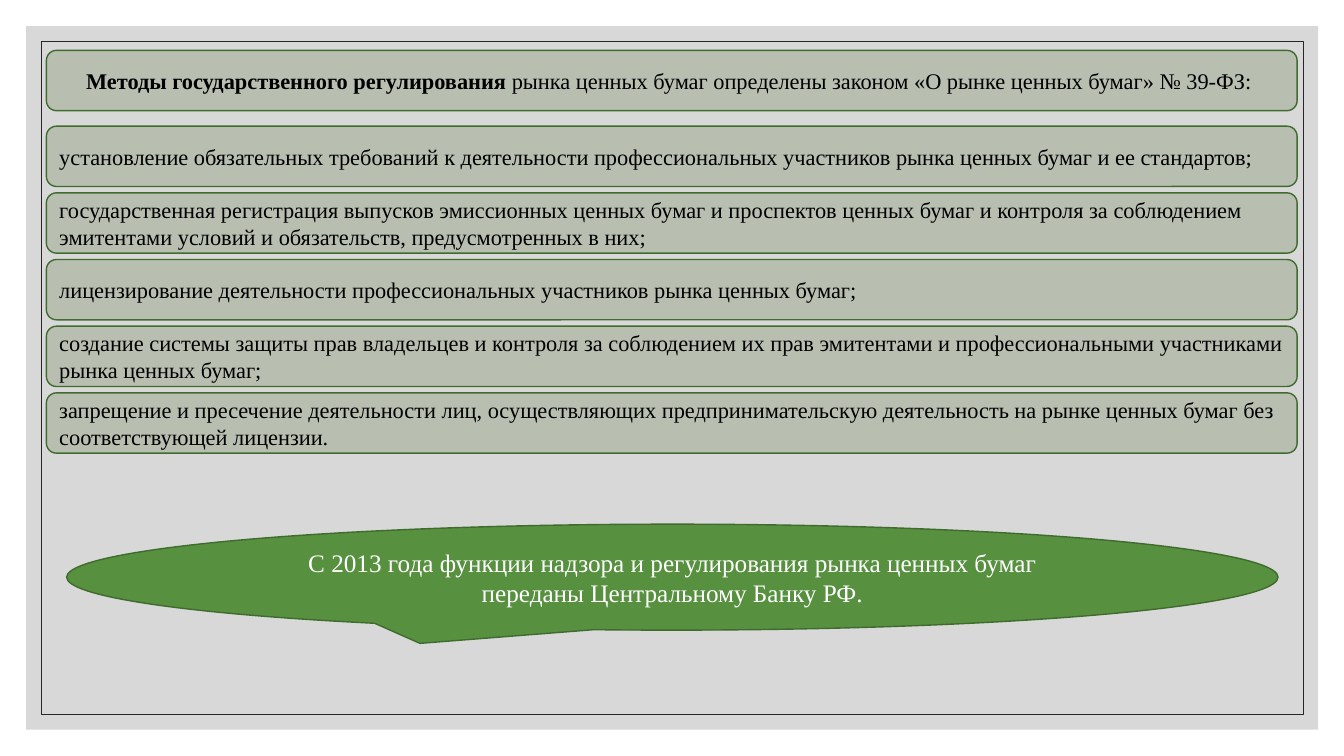
import pptx
import pptx.util
import pptx.dml.color
import pptx.enum.shapes
import pptx.enum.text
import pptx.oxml.ns
import lxml.etree

Cm = pptx.util.Cm
Pt = pptx.util.Pt
Kind = pptx.enum.shapes.MSO_SHAPE
Align = pptx.enum.text.PP_ALIGN

colors = {
    "panel": "BFBFBF",
    "frame": "262626",
    "bar": "B8BFB1",
    "edge": "406B2F",
    "bubble": "57903F",
    "dark": "000000",
    "light": "FFFFFF",
}


def shade(name):
    return pptx.dml.color.RGBColor.from_string(colors[name])


def draw(kind, box, fill=None, line=None, width=1, runs=(), size=16, ink="dark", align=Align.LEFT):
    shape = slide.shapes.add_shape(kind, *[Cm(v) for v in box])
    shape.shadow.inherit = False
    if fill:
        shape.fill.solid()
        shape.fill.fore_color.rgb = shade(fill)
    else:
        shape.fill.background()
    if line:
        shape.line.color.rgb = shade(line)
        shape.line.width = Pt(width)
    else:
        shape.line.fill.background()
    frame = shape.text_frame
    frame.word_wrap = True
    frame.vertical_anchor = pptx.enum.text.MSO_ANCHOR.MIDDLE
    para = frame.paragraphs[0]
    para.alignment = align
    for text, bold in runs:
        run = para.add_run()
        run.text = text
        run.font.name = "Times New Roman"
        run.font.size = Pt(size)
        run.font.bold = bold
        run.font.color.rgb = shade(ink)
    return shape


deck = pptx.Presentation()
deck.slide_width = Cm(33.87)
deck.slide_height = Cm(19.05)
slide = deck.slides.add_slide(deck.slide_layouts[6])

panel = draw(Kind.RECTANGLE, (0.66, 0.66, 32.56, 17.73), "panel")
tint = panel.fill._xPr.find(".//" + pptx.oxml.ns.qn("a:srgbClr"))
lxml.etree.SubElement(tint, pptx.oxml.ns.qn("a:alpha"), val="60000")
draw(Kind.RECTANGLE, (1.04, 1.04, 31.8, 16.97), line="frame", width=0.5)

left, wide, high = 1.17, 31.52, 1.52
title = [
    ("Методы государственного регулирования ", True),
    ("рынка ценных бумаг определены законом «О рынке ценных бумаг» № 39-ФЗ: ", False),
]
draw(Kind.ROUNDED_RECTANGLE, (left, 1.27, wide, high), "bar", "edge", runs=title, align=Align.CENTER)

items = [
    "установление обязательных требований к деятельности профессиональных участников рынка ценных бумаг и ее стандартов;",
    "государственная регистрация выпусков эмиссионных ценных бумаг и проспектов ценных бумаг и контроля за соблюдением эмитентами условий и обязательств, предусмотренных в них;",
    "лицензирование деятельности профессиональных участников рынка ценных бумаг;",
    "создание системы защиты прав владельцев и контроля за соблюдением их прав эмитентами и профессиональными участниками рынка ценных бумаг;",
    "запрещение и пресечение деятельности лиц, осуществляющих предпринимательскую деятельность на рынке ценных бумаг без соответствующей лицензии.",
]
first, step = 3.18, 1.68
for row, text in enumerate(items):
    box = (left, first + row * step, wide, high)
    draw(Kind.ROUNDED_RECTANGLE, box, "bar", "edge", runs=[(text, False)])

note = "С 2013 года функции надзора и регулирования рынка ценных бумаг переданы Центральному Банку РФ."
draw(Kind.OVAL_CALLOUT, (1.68, 13.21, 30.53, 2.67), "bubble", "edge",
     runs=[(note, False)], size=18, ink="light", align=Align.CENTER)

deck.save("out.pptx")
